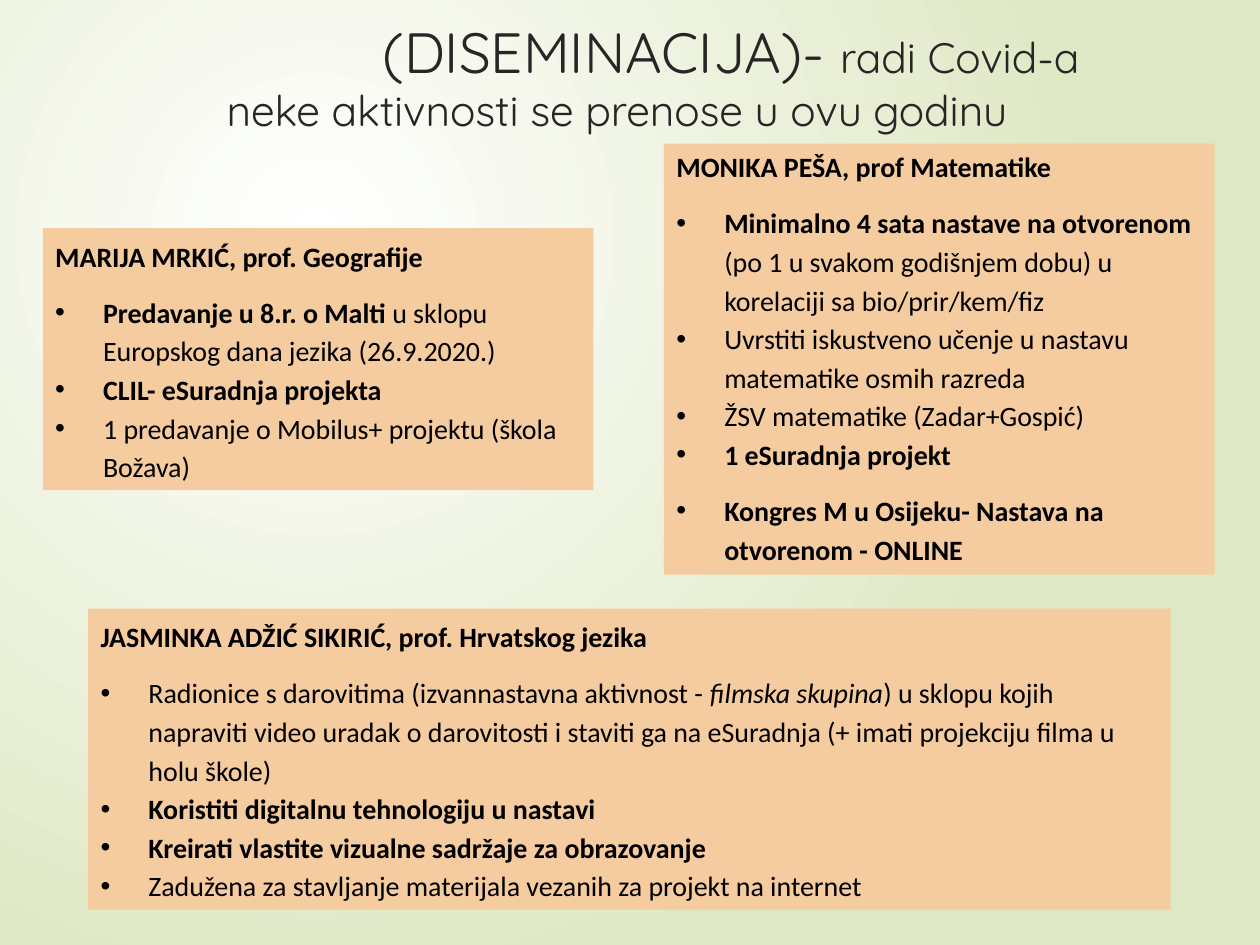
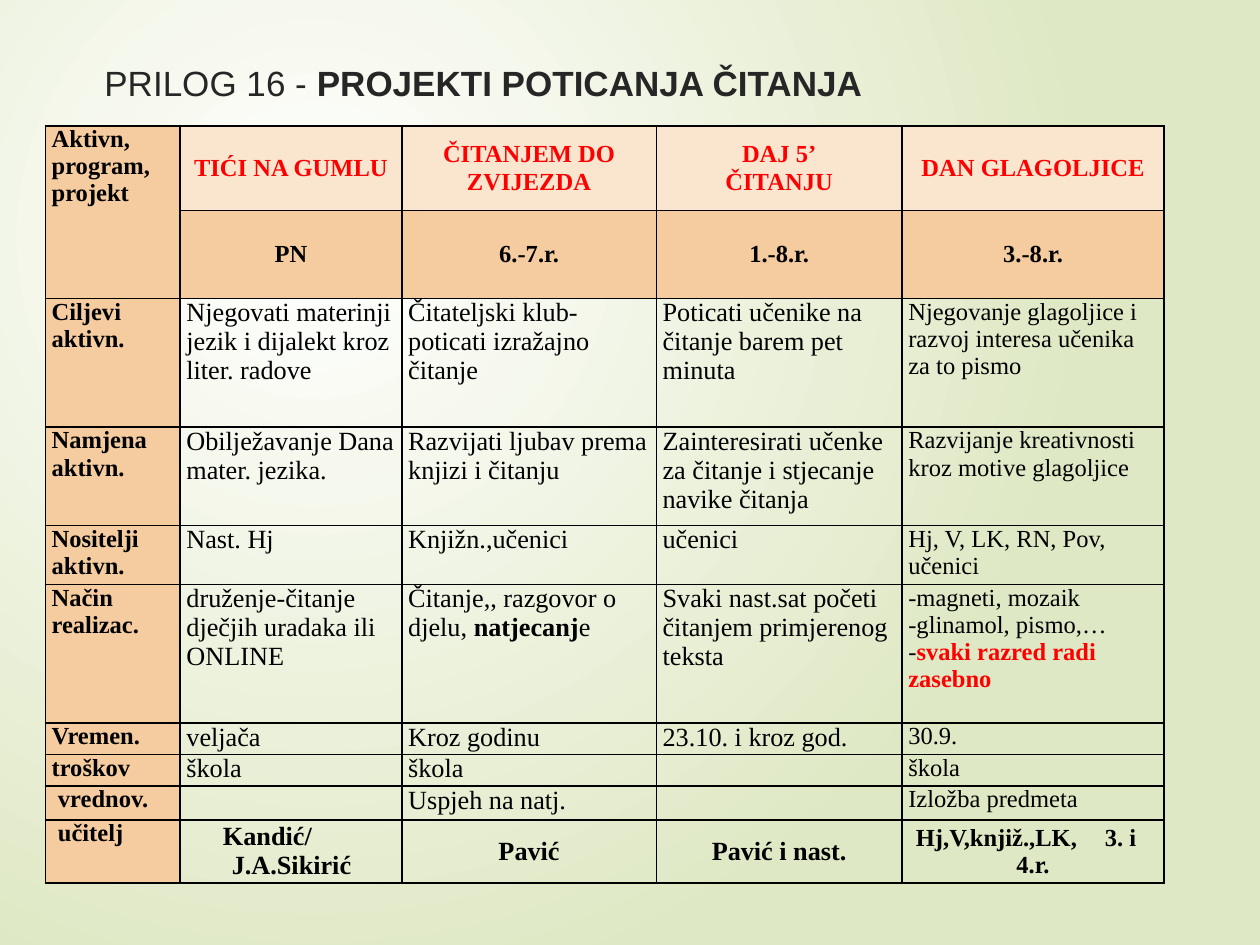
import pptx
import pptx.util
import pptx.dml.color
import pptx.enum.shapes
import pptx.enum.text
import pptx.oxml.ns
import lxml.etree

Inches = pptx.util.Inches
RGB = pptx.dml.color.RGBColor
ALIGN = pptx.enum.text.PP_ALIGN
ANCHOR = pptx.enum.text.MSO_ANCHOR
qn = pptx.oxml.ns.qn

WHITE = RGB(0xFF, 0xFF, 0xFF)
GREEN = RGB(0xDF, 0xE8, 0xC4)
PEACH = RGB(0xF5, 0xCB, 0xA0)
CREAM = RGB(0xFA, 0xE5, 0xCF)
DARK = RGB(0x26, 0x26, 0x26)
BLACK = RGB(0, 0, 0)
RED = RGB(0xFF, 0, 0)

# In all texts "|" parts the runs; a run may open with a mark:
# * bold, _ italic, # bold and red, ~ three quarters of the size.

# Title: place, top inset, font, size, lines with their left margins
SPREAD = ((0.59, 0.09, 9.08, 1.06), 0.04, "Quicksand", 32.4,
          (("(DISEMINACIJA)- |~radi Covid-a", 2.35),
           ("~neke aktivnosti se prenose u ovu godinu", 1.11)))
READING = ((0.62, 0.33, 8.75, 0.58), 0.16, "Arial", 20,
           (("PRILOG 16 - |*PROJEKTI POTICANJA ČITANJA", 0.11),))

# Card: place, heading, spacing of the heading, bullets, bullets with a gap after
CARDS = (
    ((0.34, 1.81, 4.37, 2.08), "MARIJA MRKIĆ, prof. Geografije", 1.15,
     ("*Predavanje u 8.r. o Malti |u sklopu Europskog dana jezika (26.9.2020.)",
      "*CLIL- eSuradnja projekta",
      "1 predavanje o Mobilus+ projektu (škola Božava)"), ()),
    ((5.27, 1.14, 4.37, 3.42), "MONIKA PEŠA, prof Matematike", 1,
     ("*Minimalno 4 sata nastave na otvorenom |"
      "(po 1 u svakom godišnjem dobu) u korelaciji sa bio/prir/kem/fiz",
      "Uvrstiti iskustveno učenje u nastavu matematike osmih razreda",
      "ŽSV matematike (Zadar+Gospić)",
      "*1 eSuradnja projekt",
      "*Kongres M u Osijeku- Nastava na otvorenom - ONLINE"), (3, 4)),
    ((0.7, 4.83, 8.59, 2.39), "JASMINKA ADŽIĆ SIKIRIĆ, prof. Hrvatskog jezika", 1.15,
     ("Radionice s darovitima (izvannastavna aktivnost - |_filmska skupina|"
      ") u sklopu kojih napraviti video uradak o darovitosti i staviti ga na "
      "eSuradnja (+ imati projekciju filma u holu škole)",
      "*Koristiti digitalnu tehnologiju u nastavi",
      "*Kreirati vlastite vizualne sadržaje za obrazovanje",
      "Zadužena za stavljanje materijala vezanih za projekt na internet"), ()),
)

SPOT = (0.36, 1)
HEIGHT = 5.66
COLS = (1.07, 1.76, 2.02, 1.95, 2.08)
SIZES = (14, 15, 15, 15, 14)
ROWS = (0.67, 0.35, 1.02, 0.78, 0.46, 1.1, 0.25, 0.25, 0.27, 0.33)
GRID = (
    ("*Aktivn, program, projekt", "#TIĆI NA GUMLU", "#ČITANJEM DO ZVIJEZDA",
     "#DAJ 5’\n#ČITANJU", "#DAN GLAGOLJICE"),
    ("", "*PN", "*6.-7.r.", "*1.-8.r.", "*3.-8.r."),
    ("*Ciljevi aktivn.", "Njegovati materinji jezik i dijalekt kroz liter. radove",
     "Čitateljski klub- poticati izražajno čitanje",
     "Poticati učenike na čitanje barem pet minuta",
     "Njegovanje glagoljice i razvoj interesa učenika za to pismo"),
    ("*Namjena aktivn.", "Obilježavanje Dana mater. jezika.",
     "Razvijati ljubav prema knjizi i čitanju",
     "Zainteresirati učenke za čitanje i stjecanje navike čitanja",
     "Razvijanje kreativnosti kroz motive glagoljice"),
    ("*Nositelji aktivn.", "Nast. Hj", "Knjižn.,učenici", "učenici",
     "Hj, V, LK, RN, Pov, učenici"),
    ("*Način realizac.", "druženje-čitanje dječjih uradaka ili ONLINE",
     "Čitanje,, razgovor o djelu, |*natjecanj|e",
     "Svaki nast.sat početi čitanjem primjerenog teksta",
     "-magneti, mozaik\n-glinamol, pismo,…\n-|#svaki razred radi zasebno"),
    ("*Vremen.", "veljača", "Kroz godinu", "23.10. i kroz god.", "30.9."),
    ("*troškov", "škola", "škola", "", "škola"),
    ("*vrednov.", "", "Uspjeh na natj.", "", "Izložba predmeta"),
    ("*učitelj", "*Kandić/\n*J.A.Sikirić", "*Pavić", "*Pavić i nast.",
     "*Hj,V,knjiž.,LK,\t3. i\n*4.r."),
)


def write(par, text, font, size, color):
    """Fill a paragraph with runs, each styled by its mark."""
    for part in text.split("|"):
        mark = part[:1] if part[:1] in "*_#~" else ""
        run = par.add_run()
        run.text = part[len(mark):]
        face = run.font
        face.name = font
        face.size = pptx.util.Pt(size * 0.75 if mark == "~" else size)
        face.bold = mark in ("*", "#")
        face.italic = mark == "_"
        face.color.rgb = RED if mark == "#" else color


def lines(frame, count):
    """Give the text frame this many paragraphs."""
    return [frame.paragraphs[0]] + [frame.add_paragraph() for _ in range(count - 1)]


def indent(par, left, first=0.0):
    props = par._p.get_or_add_pPr()
    props.set("marL", str(Inches(left)))
    props.set("indent", str(Inches(first)))
    return props


def start(deck, title):
    """Add a slide with the radial background and its title."""
    slide = deck.slides.add_slide(deck.slide_layouts[6])
    fill = slide.background.fill
    fill.gradient()
    for stop, color in zip(fill.gradient_stops, (WHITE, GREEN)):
        stop.color.rgb = color
    line = next(slide.element.iter(qn("a:lin")))
    glow = lxml.etree.Element(qn("a:path"), path="circle")
    lxml.etree.SubElement(glow, qn("a:fillToRect"), l="50000", t="50000",
                          r="100000", b="100000")
    line.getparent().replace(line, glow)

    spot, top, font, size, rows = title
    frame = slide.shapes.add_textbox(*map(Inches, spot)).text_frame
    frame.word_wrap = True
    frame.margin_top = Inches(top)
    for par, (text, left) in zip(lines(frame, len(rows)), rows):
        indent(par, left)
        write(par, text, font, size, DARK)
    return slide


def card(slide, spot, head, lead, items, gaps):
    box = slide.shapes.add_shape(pptx.enum.shapes.MSO_SHAPE.RECTANGLE,
                                 *map(Inches, spot))
    box.shadow.inherit = False
    box.fill.solid()
    box.fill.fore_color.rgb = PEACH
    box.line.fill.background()
    frame = box.text_frame
    frame.word_wrap = True
    frame.vertical_anchor = ANCHOR.TOP
    pars = lines(frame, len(items) + 1)
    for k, (par, text) in enumerate(zip(pars, ("*" + head,) + items)):
        par.alignment = ALIGN.LEFT
        par.line_spacing = 1.15 if k else lead
        par.space_after = pptx.util.Pt(10 if k == 0 or k - 1 in gaps else 0)
        if k:
            props = indent(par, 0.38, -0.38)
            lxml.etree.SubElement(props, qn("a:buFont"), typeface="Arial")
            lxml.etree.SubElement(props, qn("a:buChar"), char="•")
        write(par, text, "Calibri", 16, BLACK)


def border(cell):
    props = cell._tc.get_or_add_tcPr()
    for side in "LRTB":
        edge = lxml.etree.SubElement(props, qn("a:ln" + side), w="12700")
        paint = lxml.etree.SubElement(edge, qn("a:solidFill"))
        lxml.etree.SubElement(paint, qn("a:srgbClr"), val=str(BLACK))


def fill(cell, text, row, col):
    border(cell)
    if col == 0 or row < 2:
        cell.fill.solid()
        cell.fill.fore_color.rgb = CREAM if col and row == 0 else PEACH
    else:
        cell.fill.background()
    cell.margin_left = cell.margin_right = Inches(0.05)
    cell.margin_top = cell.margin_bottom = 0
    mid = col > 0 and (row < 2 or row == len(GRID) - 1)
    cell.vertical_anchor = ANCHOR.MIDDLE if mid else ANCHOR.TOP
    size = 14 if row < 2 else SIZES[col]
    parts = text.split("\n")
    for par, part in zip(lines(cell.text_frame, len(parts)), parts):
        par.alignment = ALIGN.CENTER if mid else ALIGN.LEFT
        if part:
            write(par, part, "Times New Roman", size, BLACK)
        else:
            lxml.etree.SubElement(par._p, qn("a:endParaRPr"), sz=str(size * 100))


def plan(slide):
    """Add the table of reading projects."""
    frame = slide.shapes.add_table(len(ROWS), len(COLS), *map(
        Inches, SPOT + (sum(COLS), HEIGHT)))
    table = frame.table
    table.first_row = table.horz_banding = False
    for col, width in zip(table.columns, COLS):
        col.width = Inches(width)
    for row, height in zip(table.rows, ROWS):
        row.height = Inches(height)
    frame.height = Inches(HEIGHT)
    for r, texts in enumerate(GRID):
        for c, text in enumerate(texts):
            fill(table.cell(r, c), text, r, c)
    table.cell(0, 0).merge(table.cell(1, 0))

    last = len(GRID) - 1
    for r in (last - 1, last):
        indent(table.cell(r, 0).text_frame.paragraphs[0], 0.05)
    pair = table.cell(last, 1).text_frame.paragraphs
    for par, left in zip(pair, (0.29, 0.36)):
        par.alignment = ALIGN.LEFT
        indent(par, left)
    staff = table.cell(last, 4).text_frame.paragraphs[0]
    staff.alignment = ALIGN.LEFT
    tabs = lxml.etree.SubElement(indent(staff, 0.06), qn("a:tabLst"))
    lxml.etree.SubElement(tabs, qn("a:tab"), pos=str(Inches(1.77)), algn="l")


def main():
    deck = pptx.Presentation()
    deck.slide_width, deck.slide_height = Inches(10), Inches(7.5)
    slide = start(deck, SPREAD)
    for item in CARDS:
        card(slide, *item)
    plan(start(deck, READING))
    deck.save("out.pptx")


if __name__ == "__main__":
    main()
